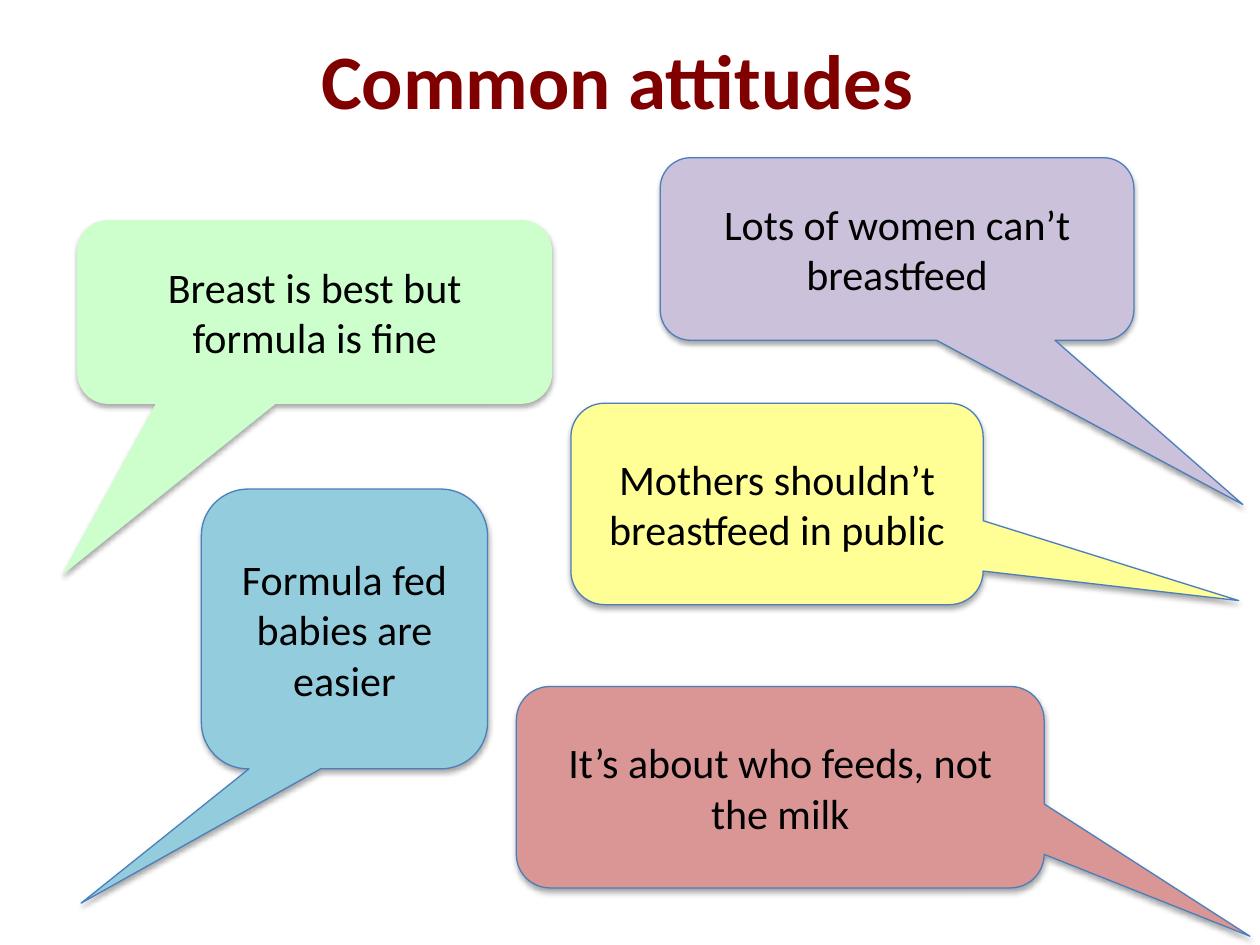
from lxml.etree import SubElement
from pptx import Presentation
from pptx.dml.color import RGBColor
from pptx.enum.shapes import MSO_SHAPE
from pptx.enum.text import MSO_ANCHOR, PP_ALIGN
from pptx.oxml.ns import qn
from pptx.util import Cm, Pt

FONT = "Calibri"
OUTLINE = "4B7EBC"
GREEN = "CCFFCC"

# box (left, top, width, height in cm), pointer tip from the centre
# as fractions of width and height, fill, line, text
CALLOUTS = [
    ((1.57, 4.45, 9.55, 3.68), (-0.53, 1.43), GREEN, GREEN,
     "Breast is best but formula is fine"),
    ((13.31, 3.18, 9.55, 3.68), (0.73, 1.4), "CCC1DA", OUTLINE,
     "Lots of women can’t breastfeed"),
    ((4.06, 9.86, 5.77, 5.64), (-0.92, 0.98), "93CDDD", OUTLINE,
     "Formula fed babies are easier"),
    ((10.41, 13.84, 10.64, 4.06), (0.89, 0.74), "D99694", OUTLINE,
     "It’s about who feeds, not the milk"),
    ((11.51, 8.13, 8.31, 4.06), (1.12, 0.48), "FFFF95", OUTLINE,
     "Mothers shouldn’t breastfeed in public"),
]


def rgb(hex_color):
    return RGBColor.from_string(hex_color)


def write(shape, text, size, color, bold=False):
    tf = shape.text_frame
    tf.word_wrap = True
    tf.vertical_anchor = MSO_ANCHOR.MIDDLE
    p = tf.paragraphs[0]
    p.alignment = PP_ALIGN.CENTER
    r = p.add_run()
    r.text = text
    r.font.name = FONT
    r.font.size = Pt(size)
    r.font.bold = bold
    r.font.color.rgb = rgb(color)


def add_soft_shadow(shape):
    shape.shadow.inherit = False
    effects = shape._element.spPr.find(qn("a:effectLst"))
    shadow = SubElement(effects, qn("a:outerShdw"), blurRad=str(Pt(3.1)),
                        dist=str(Pt(1.8)), dir="5400000", rotWithShape="0")
    color = SubElement(shadow, qn("a:srgbClr"), val="000000")
    SubElement(color, qn("a:alpha"), val="35000")


def place_title(s, box, text):
    title = s.shapes.title
    title.left, title.top, title.width, title.height = map(Cm, box)
    write(title, text, 44, "800000", bold=True)


def add_callout(s, box, tip, fill, line, text):
    sp = s.shapes.add_shape(MSO_SHAPE.ROUNDED_RECTANGULAR_CALLOUT,
                            *map(Cm, box))
    sp.adjustments[0], sp.adjustments[1] = tip
    sp.fill.solid()
    sp.fill.fore_color.rgb = rgb(fill)
    sp.line.color.rgb = rgb(line)
    sp.line.width = Pt(0.75)
    add_soft_shadow(sp)
    write(sp, text, 24, "000000")


def main():
    prs = Presentation()
    prs.slide_width, prs.slide_height = Cm(25.4), Cm(19.05)
    s = prs.slides.add_slide(prs.slide_layouts.get_by_name("Title Only"))
    place_title(s, (1.02, 0, 22.86, 3.18), "Common attitudes")
    for callout in CALLOUTS:
        add_callout(s, *callout)
    prs.save("out.pptx")


if __name__ == "__main__":
    main()
